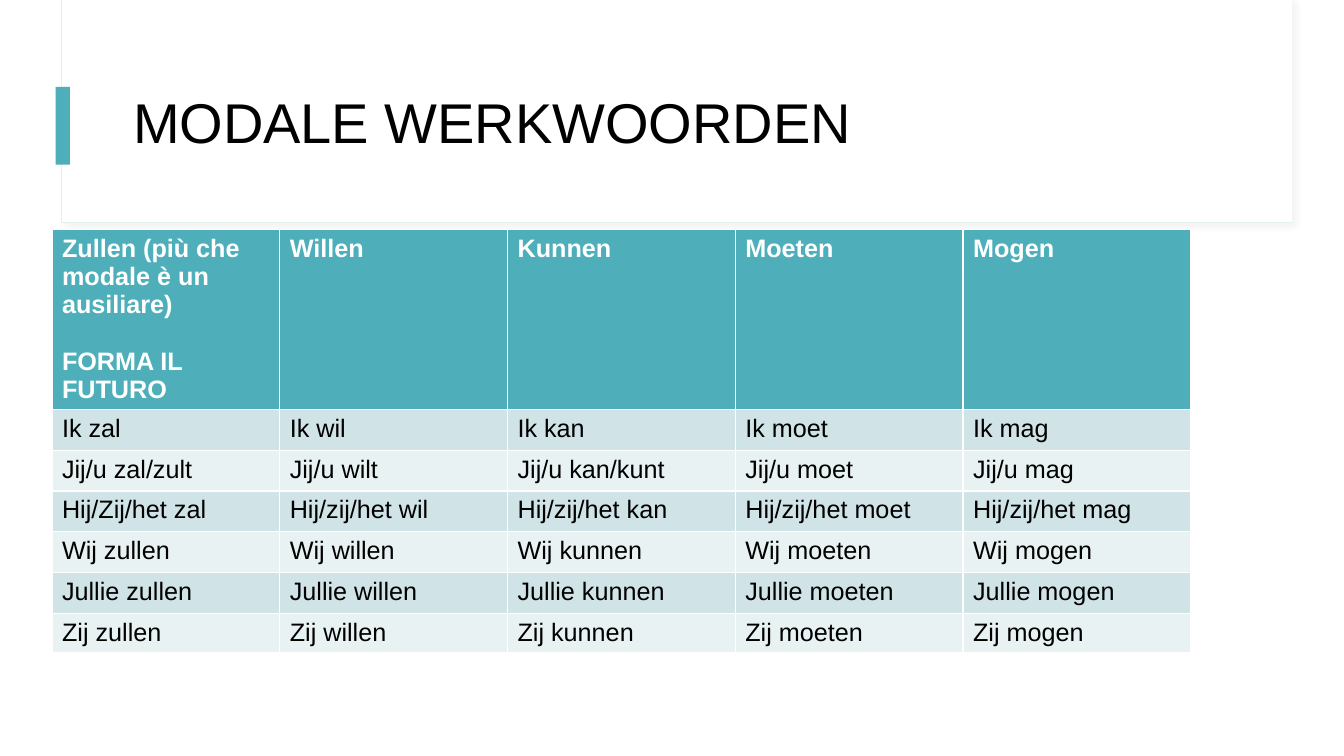
import pptx
import pptx.util
import pptx.dml.color
import pptx.enum.shapes
import pptx.enum.text
import pptx.oxml

Cm, Pt = pptx.util.Cm, pptx.util.Pt
RGBColor = pptx.dml.color.RGBColor

WHITE = RGBColor(0xFF, 0xFF, 0xFF)
BLACK = RGBColor(0, 0, 0)
TEAL = RGBColor(0x4E, 0xAF, 0xBA)
MINT = RGBColor(0xE4, 0xF0, 0xEC)
BANDS = [RGBColor(0xE9, 0xF2, 0xF3), RGBColor(0xD0, 0xE3, 0xE7)]
FONT = "Arial"

SHADOW = """<a:effectLst
  xmlns:a="http://schemas.openxmlformats.org/drawingml/2006/main">
  <a:outerShdw blurRad="50800" dist="38100" dir="2700000">
    <a:srgbClr val="D9D9D9"><a:alpha val="30000"/></a:srgbClr>
  </a:outerShdw></a:effectLst>"""

ROWS = [
    ["Zullen (più che modale è un ausiliare)\nFORMA IL FUTURO",
     "Willen", "Kunnen", "Moeten", "Mogen"],
    ["Ik zal", "Ik wil", "Ik kan", "Ik moet", "Ik mag"],
    ["Jij/u zal/zult", "Jij/u wilt", "Jij/u kan/kunt", "Jij/u moet",
     "Jij/u mag"],
    ["Hij/Zij/het zal", "Hij/zij/het wil", "Hij/zij/het kan",
     "Hij/zij/het moet", "Hij/zij/het mag"],
    ["Wij zullen", "Wij willen", "Wij kunnen", "Wij moeten", "Wij mogen"],
    ["Jullie zullen", "Jullie willen", "Jullie kunnen", "Jullie moeten",
     "Jullie mogen"],
    ["Zij zullen", "Zij willen", "Zij kunnen", "Zij moeten", "Zij mogen"],
]


def style(run, size, color, bold=False):
    run.font.name = FONT
    run.font.size = Pt(size)
    run.font.color.rgb = color
    run.font.bold = bold


def block(left, top, width, height, color):
    shape = slide.shapes.add_shape(
        pptx.enum.shapes.MSO_SHAPE.RECTANGLE,
        Cm(left), Cm(top), Cm(width), Cm(height))
    shape.shadow.inherit = False
    shape.fill.solid()
    shape.fill.fore_color.rgb = color
    shape.line.fill.background()
    return shape


deck = pptx.Presentation()
deck.slide_width, deck.slide_height = Cm(33.87), Cm(19.05)
slide = deck.slides.add_slide(deck.slide_layouts[5])

# Title panel with a thin edge and soft shadow, then the accent bar
edge = block(1.55, 0, 31.01, 5.62, WHITE)
edge.line.color.rgb = MINT
edge.line.width = Pt(0.75)
props = edge._element.spPr
props.remove(props[-1])
props.append(pptx.oxml.parse_xml(SHADOW))
block(1.57, 0, 30.99, 5.59, WHITE)
block(1.4, 2.19, 0.36, 1.96, TEAL)

# Title, brought in front of the panel
title = slide.shapes.title
slide.shapes._spTree.append(title._element)
title.left, title.top = Cm(3.1), Cm(1.52)
title.width, title.height = Cm(28.24), Cm(3.28)
frame = title.text_frame
frame.text = "MODALE WERKWOORDEN"
frame.vertical_anchor = pptx.enum.text.MSO_ANCHOR.MIDDLE
head = frame.paragraphs[0]
head.alignment = pptx.enum.text.PP_ALIGN.LEFT
head.line_spacing = 0.9
style(head.runs[0], 40, BLACK)

# Verb table
heights = [4.5] + [1.03] * 5 + [0.97]
table = slide.shapes.add_table(
    len(ROWS), len(ROWS[0]), Cm(1.31), Cm(5.78),
    Cm(28.7), Cm(sum(heights))).table
for row, height in zip(table.rows, heights):
    row.height = Cm(height)

for i, words in enumerate(ROWS):
    for j, word in enumerate(words):
        cell = table.cell(i, j)
        cell.text_frame.text = word
        cell.fill.solid()
        cell.fill.fore_color.rgb = BANDS[i % 2] if i else TEAL
        for para in cell.text_frame.paragraphs:
            style(para.runs[0], 18, BLACK if i else WHITE, i == 0)

# Gap of one line above the second header note
table.cell(0, 0).text_frame.paragraphs[1].space_before = Pt(20.5)

deck.save("out.pptx")
